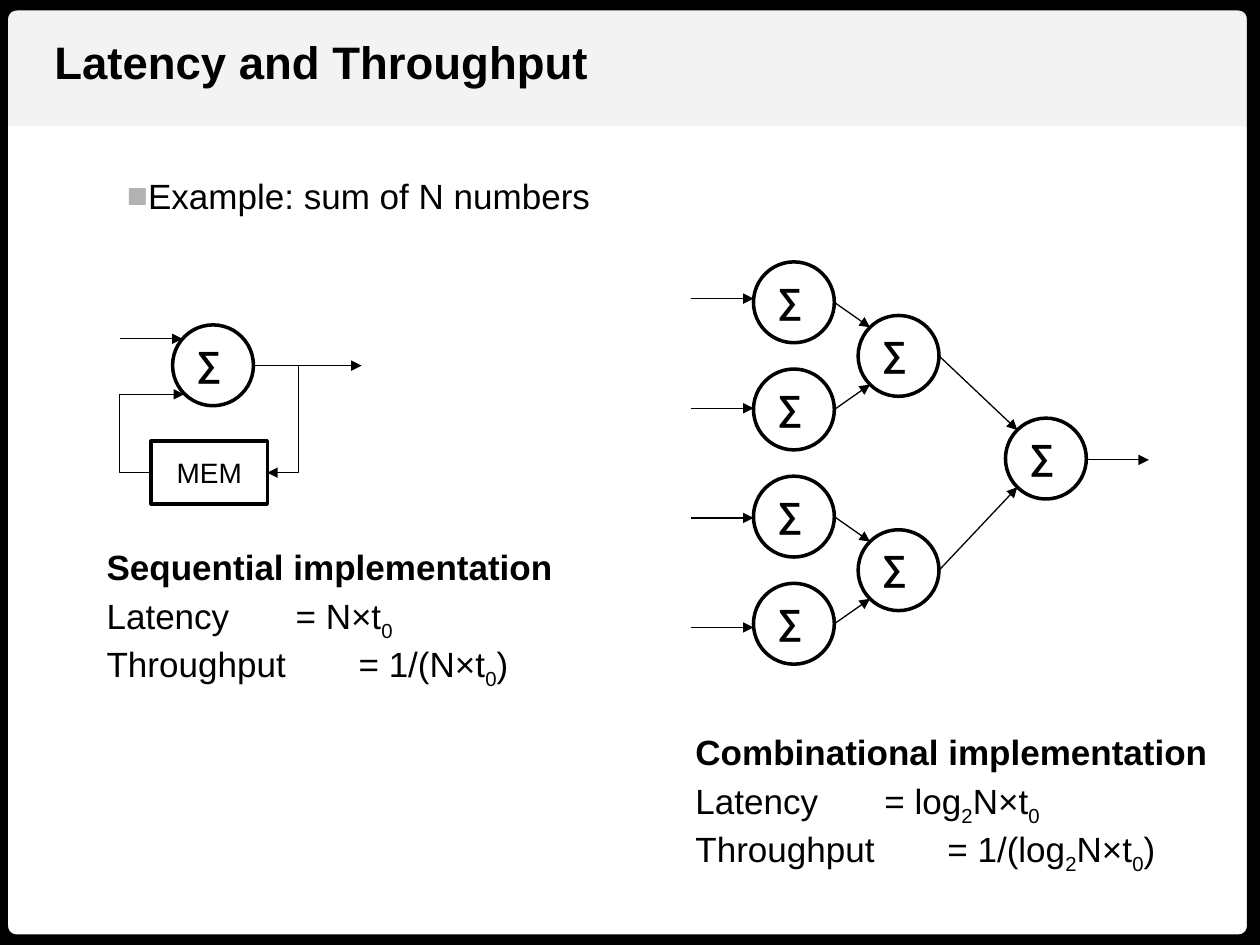
from dataclasses import dataclass
from math import sqrt

from lxml.etree import SubElement
from pptx import Presentation
from pptx.dml.color import RGBColor as RGB
from pptx.enum.shapes import MSO_CONNECTOR as Link, MSO_SHAPE as Shape
from pptx.enum.text import MSO_ANCHOR as Anchor, MSO_AUTO_SIZE as Fit, PP_ALIGN as Align
from pptx.oxml.ns import qn
from pptx.util import Cm, Pt


@dataclass(frozen=True)
class Theme:
    """Colours, type sizes, line widths and node size of the slide."""
    font: str = "Arial"
    ink: RGB = RGB(0, 0, 0)
    band: RGB = RGB(0xF3, 0xF3, 0xF3)
    mark: str = "B2B2B2"
    title: int = 26
    body: int = 20
    label: int = 16
    frame: float = 12
    edge: float = 2
    wire: float = 0.75
    node: float = 1.63


T = Theme()


def style(run, size, bold=False):
    """Give a run the theme's font and colour."""
    font = run.font
    font.name, font.size, font.bold = T.font, Pt(size), bold
    font.color.rgb = T.ink


def shape(shapes, kind, box, fill=None, width=None):
    """Add a flat preset shape with an optional fill and outline."""
    item = shapes.add_shape(kind, *map(Cm, box))
    item.shadow.inherit = False
    if fill is None:
        item.fill.background()
    else:
        item.fill.solid()
        item.fill.fore_color.rgb = fill
    if width is None:
        item.line.fill.background()
    else:
        item.line.color.rgb = T.ink
        item.line.width = Pt(width)
    return item


def text(shapes, box, lines, bold=False, wrap=False):
    """Add a text box; pieces between bars are subscripts."""
    item = shapes.add_textbox(*map(Cm, box))
    frame = item.text_frame
    frame.word_wrap = wrap
    frame.auto_size = Fit.SHAPE_TO_FIT_TEXT
    frame.text = "\n" * (len(lines) - 1)
    for para, line in zip(frame.paragraphs, lines):
        for i, part in enumerate(line.split("|")):
            run = para.add_run()
            run.text = part
            style(run, T.body, bold)
            if i % 2:
                run.font._element.set("baseline", "-25000")
    return item


def bullet(para, indent):
    """Give a paragraph a grey square bullet."""
    props = para._p.get_or_add_pPr()
    props.set("marL", "0")
    props.set("indent", str(Cm(indent)))
    color = SubElement(props, qn("a:buClr"))
    SubElement(color, qn("a:srgbClr"), val=T.mark)
    SubElement(props, qn("a:buFont"), typeface=T.font)
    SubElement(props, qn("a:buChar"), char="■")


def arrow(shapes, x, y, x2, y2, via=None):
    """Add an arrow, bent at the column via when one is given."""
    kind = Link.STRAIGHT if via is None else Link.ELBOW
    item = shapes.add_connector(kind, *map(Cm, (x, y, x2, y2)))
    item.line.color.rgb = T.ink
    item.line.width = Pt(T.wire)
    props = item._element.spPr
    SubElement(props.find(qn("a:ln")), qn("a:tailEnd"), type="triangle")
    SubElement(props, qn("a:effectLst"))
    if via is not None:
        ratio = round((via - x) / (x2 - x) * 100000)
        guides = props.find(qn("a:prstGeom")).find(qn("a:avLst"))
        SubElement(guides, qn("a:gd"), name="adj1", fmla=f"val {ratio}")
    return item


def node(shapes, x, y):
    """Add a sum node and return its top left corner."""
    parts = shapes.add_group_shape().shapes
    shape(parts, Shape.OVAL, (x, y, T.node, T.node), width=T.edge)
    text(parts, (x + 0.23, y + 0.2, 1.02, 1.12), ["∑"], bold=True)
    return x, y


def join(shapes, start, end):
    """Draw an arrow from a node's right side to the next one's diagonal."""
    half = T.node / 2
    slant = half / sqrt(2)
    side = -1 if start[1] < end[1] else 1
    arrow(shapes, start[0] + T.node, start[1] + half,
          end[0] + half - slant, end[1] + half + side * slant)


def summary(shapes, x, y, head, lines, width):
    """Add a bold heading with its figures below."""
    text(shapes, (x, y, width, 1.12), [head], bold=True)
    text(shapes, (x, y + 0.99, width - 0.95, 2.54), lines)


def heading(slide):
    """Draw the band and frame, then set the title above them."""
    shapes = slide.shapes
    shape(shapes, Shape.RECTANGLE, (0, 0, 25.4, 2.54), fill=T.band)
    frame = shape(shapes, Shape.ROUNDED_RECTANGLE, (-0.05, 0, 25.4, 19.05), width=T.frame)
    frame.adjustments[0] = 0.02
    title = shapes.title
    shapes._spTree.append(title._element)
    title.left, title.top, title.width, title.height = map(Cm, (0.84, 0.56, 11.38, 1.37))
    body = title.text_frame
    body.text = "Latency and Throughput"
    body.word_wrap = False
    body.auto_size = Fit.SHAPE_TO_FIT_TEXT
    body.vertical_anchor = Anchor.TOP
    para = body.paragraphs[0]
    para.alignment = Align.LEFT
    style(para.runs[0], T.title, True)


def loop(shapes):
    """Draw the sequential adder with its memory."""
    node(shapes, 3.48, 6.55)
    store = shape(shapes, Shape.RECTANGLE, (3.05, 8.89, 2.34, 1.27), width=T.edge)
    store.text_frame.text = "MEM"
    store.text_frame.word_wrap = False
    store.text_frame.vertical_anchor = Anchor.MIDDLE
    para = store.text_frame.paragraphs[0]
    para.alignment = Align.CENTER
    style(para.runs[0], T.label)
    arrow(shapes, 5.11, 7.37, 5.39, 9.53, via=6.02)
    arrow(shapes, 3.05, 9.53, 3.71, 7.95, via=2.41)
    arrow(shapes, 2.41, 6.83, 3.68, 6.83)
    arrow(shapes, 6.02, 7.37, 7.29, 7.37)


def tree(shapes):
    """Draw the combinational adder tree."""
    first = [node(shapes, 15.19, 5.28 + 2.16 * i) for i in range(4)]
    pair = [node(shapes, 17.3, first[i][1] + 1.08) for i in (0, 2)]
    last = node(shapes, 20.27, 8.43)
    for i, leaf in enumerate(first):
        join(shapes, leaf, pair[i // 2])
        level = 6.02 + 2.21 * i
        arrow(shapes, 13.92, level, 15.19, level)
    for mid in pair:
        join(shapes, mid, last)
    arrow(shapes, 21.9, 9.27, 23.16, 9.27)


def main():
    """Build and save the slide."""
    deck = Presentation()
    deck.slide_width, deck.slide_height = Cm(25.4), Cm(19.05)
    slide = deck.slides.add_slide(deck.slide_layouts[5])
    shapes = slide.shapes
    heading(slide)
    intro = text(shapes, (0.71, 2.97, 23.85, 2.67), ["Example: sum of N numbers"], wrap=True)
    para = intro.text_frame.paragraphs[0]
    para.line_spacing = 1.5
    bullet(para, 1.6)
    loop(shapes)
    summary(shapes, 1.9, 10.87, "Sequential implementation",
            ["Latency \t= N×t|0", "Throughput \t= 1/(N×t|0|)"], 9.6)
    tree(shapes)
    summary(shapes, 13.77, 14.6, "Combinational implementation",
            ["Latency \t= log|2|N×t|0", "Throughput \t= 1/(log|2|N×t|0|)"], 10.9)
    deck.save("out.pptx")


if __name__ == "__main__":
    main()
